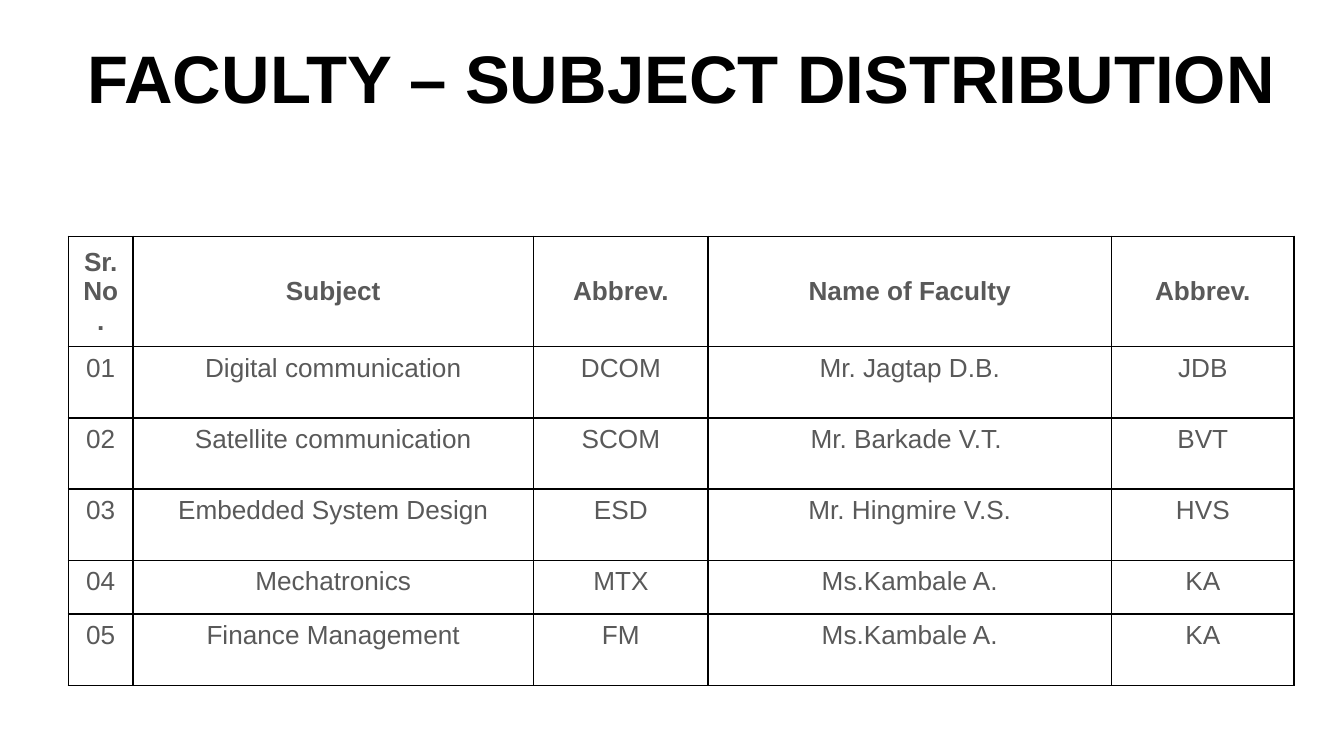
from lxml.etree import SubElement
from pptx import Presentation
from pptx.dml.color import RGBColor
from pptx.enum.text import MSO_ANCHOR, PP_ALIGN
from pptx.oxml.ns import qn
from pptx.util import Inches, Pt

# Content
TITLE = "FACULTY – SUBJECT DISTRIBUTION\n"
ROWS = [
    ("Sr. No.", "Subject", "Abbrev.", "Name of Faculty", "Abbrev."),
    ("01", "Digital communication", "DCOM", "Mr. Jagtap D.B.", "JDB"),
    ("02", "Satellite communication", "SCOM", "Mr. Barkade V.T. ", "BVT"),
    ("03", "Embedded System Design", "ESD", "Mr. Hingmire V.S.", "HVS"),
    ("04", "Mechatronics", "MTX", "Ms.Kambale A.", "KA"),
    ("05", "Finance Management", "FM", "Ms.Kambale A.", "KA"),
]
COLUMN_WIDTHS = [0.48, 2.98, 1.3, 3, 1.36]
ROW_HEIGHTS = [0.82, 0.53, 0.53, 0.53, 0.4, 0.53]

THEME = {
    "font": "Arial",
    "title_color": "000000",
    "text_color": "595959",
    "border_color": "000000",
    "title_size": 36,
    "text_size": 14,
    "border_width": 1,
}


def write_text(text_frame, text, size, color, bold=False):
    paragraph = text_frame.paragraphs[0]
    paragraph.alignment = PP_ALIGN.CENTER
    for index, line in enumerate(text.split("\n")):
        if index:
            paragraph.add_line_break()
        if line:
            run = paragraph.add_run()
            run.text = line
            run.font.name = THEME["font"]
            run.font.size = Pt(size)
            run.font.bold = bold
            run.font.color.rgb = RGBColor.from_string(color)
    # The line after a closing break takes its height from here
    SubElement(paragraph._p, qn("a:endParaRPr"), sz=str(size * 100))


def add_borders(cell):
    properties = cell._tc.get_or_add_tcPr()
    for position, side in enumerate(("a:lnL", "a:lnR", "a:lnT", "a:lnB")):
        line = SubElement(properties, qn(side), w=str(Pt(THEME["border_width"])))
        fill = SubElement(line, qn("a:solidFill"))
        SubElement(fill, qn("a:srgbClr"), val=THEME["border_color"])
        properties.insert(position, line)  # borders precede the cell fill


# Slide in 16:9
presentation = Presentation()
presentation.slide_width = Inches(10)
presentation.slide_height = presentation.slide_width * 9 // 16
slide = presentation.slides.add_slide(presentation.slide_layouts[6])

# Title
title = slide.shapes.add_textbox(Inches(0.41), Inches(0.41), Inches(9.32), Inches(0.92))
title_frame = title.text_frame
title_frame.word_wrap = True
title_frame.vertical_anchor = MSO_ANCHOR.MIDDLE
title_frame.margin_top = title_frame.margin_bottom = Inches(0.1)
write_text(title_frame, TITLE, size=THEME["title_size"],
           color=THEME["title_color"], bold=True)

# Faculty table
table = slide.shapes.add_table(
    len(ROWS), len(COLUMN_WIDTHS), Inches(0.51), Inches(1.76),
    Inches(sum(COLUMN_WIDTHS)), Inches(sum(ROW_HEIGHTS))).table
table.first_row = False
table.horz_banding = False
for column, width in zip(table.columns, COLUMN_WIDTHS):
    column.width = Inches(width)
for row, height in zip(table.rows, ROW_HEIGHTS):
    row.height = Inches(height)

for row_index, texts in enumerate(ROWS):
    is_header = row_index == 0
    for column_index, text in enumerate(texts):
        cell = table.cell(row_index, column_index)
        cell.fill.background()
        cell.vertical_anchor = MSO_ANCHOR.MIDDLE if is_header else MSO_ANCHOR.TOP
        write_text(cell.text_frame, text, size=THEME["text_size"],
                   color=THEME["text_color"], bold=is_header)
        add_borders(cell)

presentation.save("out.pptx")
